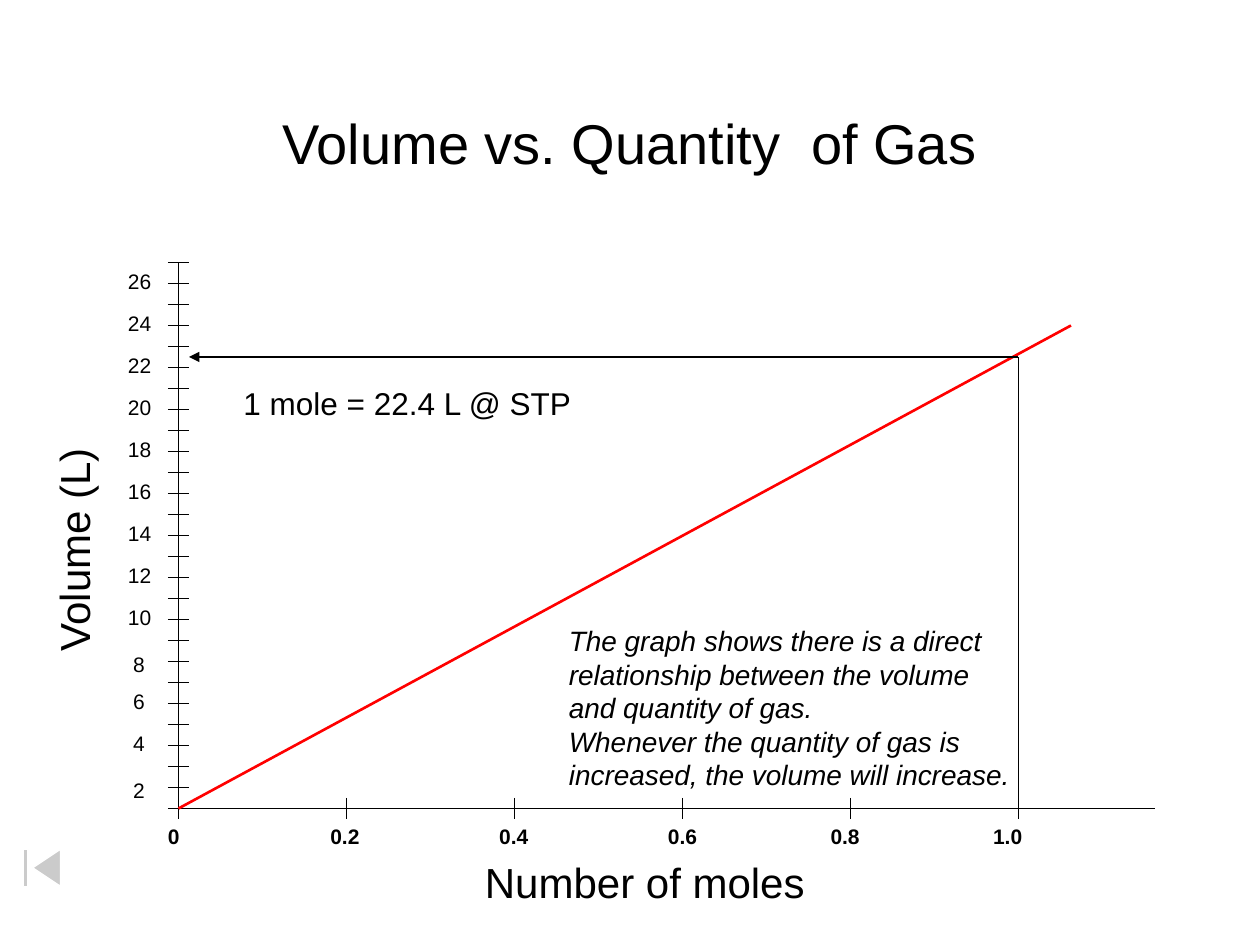
from lxml import etree
from pptx import Presentation
from pptx.dml.color import RGBColor
from pptx.enum.shapes import MSO_CONNECTOR, MSO_SHAPE
from pptx.enum.text import MSO_ANCHOR, MSO_AUTO_SIZE, PP_ALIGN
from pptx.oxml.ns import qn
from pptx.util import Inches, Pt

STRAIGHT = MSO_CONNECTOR.STRAIGHT
BUTTON = MSO_SHAPE.ACTION_BUTTON_BEGINNING
MIDDLE, TOP = MSO_ANCHOR.MIDDLE, MSO_ANCHOR.TOP
LEFT, CENTER = PP_ALIGN.LEFT, PP_ALIGN.CENTER
FIT = MSO_AUTO_SIZE.SHAPE_TO_FIT_TEXT

COLS, ROWS = 60, 45       # slide grid, six cells to the inch
AXIS_X, AXIS_Y = 8.5, 38.5  # origin of the graph
X_STEP = 8                # columns per 0.2 mole


def unit(n):
    return Inches(n / 6)


def color(value):
    return RGBColor.from_string(value)


def write(tf, text, size=12, bold=False, italic=False, align=LEFT,
          ink="000000", tabs=()):
    """Fill a text frame, one paragraph for each line of text."""
    for i, line in enumerate(text.split("\n")):
        p = tf.paragraphs[0] if i == 0 else tf.add_paragraph()
        p.alignment = align
        if tabs:
            stops = etree.SubElement(p._p.get_or_add_pPr(), qn("a:tabLst"))
            for pos in tabs:
                etree.SubElement(stops, qn("a:tab"), pos=str(Inches(pos)), algn="l")
        r = p.add_run()
        r.text = line
        r.font.name, r.font.size = "Arial", Pt(size)
        r.font.bold, r.font.italic = bold, italic
        r.font.color.rgb = color(ink)


class Graph:
    """Style and current slide; lengths are grid columns and rows."""

    def __init__(self, prs, ink="000000", weight=0.75):
        self.s = prs.slides.add_slide(prs.slide_layouts[6])
        self.ink, self.weight = ink, weight

    def text(self, x, y, w, h, text, wrap=False, anchor=TOP, rotation=0, **fmt):
        sp = self.s.shapes.add_textbox(unit(x), unit(y), unit(w), unit(h))
        sp.rotation = rotation
        tf = sp.text_frame
        tf.word_wrap, tf.vertical_anchor = wrap, anchor
        if anchor == TOP:
            tf.auto_size = FIT
        write(tf, text, **fmt)

    def line(self, x1, y1, x2, y2, ink=None, weight=None, arrow=False):
        c = self.s.shapes.add_connector(STRAIGHT, unit(x1), unit(y1),
                                        unit(x2), unit(y2))
        c.line.color.rgb = color(ink or self.ink)
        c.line.width = Pt(weight or self.weight)
        if arrow:
            etree.SubElement(c.line._get_or_add_ln(), qn("a:headEnd"),
                             type="triangle")
        etree.SubElement(c._element.spPr, qn("a:effectLst"))

    def button(self, x, y, w, h, fill="FFFFFF", opacity=50):
        sp = self.s.shapes.add_shape(BUTTON, unit(x), unit(y), unit(w), unit(h))
        sp.shadow.inherit = False
        sp.fill.solid()
        sp.fill.fore_color.rgb = color(fill)
        rgb = sp._element.spPr.find(qn("a:solidFill"))[0]
        etree.SubElement(rgb, qn("a:alpha"), val=str(opacity * 1000))
        sp.line.color.rgb = color(fill)
        sp.line.width = Pt(self.weight)


def main():
    prs = Presentation()
    prs.slide_width, prs.slide_height = unit(COLS), unit(ROWS)
    g = Graph(prs)

    # Title
    g.text(4.5, 3, 51, 7.5, "Volume vs. Quantity  of Gas", wrap=True,
           anchor=MIDDLE, size=32, align=CENTER)

    # Axes and tick marks
    g.line(AXIS_X, AXIS_Y, 55, AXIS_Y)
    g.line(AXIS_X, AXIS_Y, AXIS_X, AXIS_Y - 26)
    for i in range(27):
        g.line(AXIS_X - 0.5, AXIS_Y - i, AXIS_X + 0.5, AXIS_Y - i)
    for i in range(6):
        x = AXIS_X + i * X_STEP
        g.line(x, AXIS_Y - 0.5, x, AXIS_Y + 0.5)

    # Axis labels
    g.text(7.4, 38.9, 43.1, 1.8, "0\t0.2\t0.4\t0.6\t0.8\t1.0", wrap=True,
           bold=True, tabs=(1.29, 2.63, 3.97, 5.26, 6.55))
    nudge = {2: 0.25, 8: 0.25}
    for v in range(2, 27, 2):
        x, w = (5.75, 1.75) if v < 10 else (5.5, 2.35)
        g.text(x, AXIS_Y - v + nudge.get(v, 0), w, 1.8, str(v))
    g.text(-3.3, 23.3, 13.6, 3, "Volume (L)", wrap=True, rotation=270, size=24)
    g.text(22.5, 40.5, 16.45, 3, "Number of moles", size=24)

    # Reading at one mole and the volume line
    one_mole, volume = AXIS_X + 5 * X_STEP, 17
    g.line(one_mole, AXIS_Y - 0.5, one_mole, volume)
    g.line(AXIS_X, AXIS_Y, 51, 15.5, ink="FF0000", weight=1.5)
    g.line(AXIS_X + 0.5, volume, one_mole, volume, arrow=True)

    # Notes on the graph
    g.text(26.5, 29.4, 23, 8.65,
           "The graph shows there is a direct\n"
           "relationship between the volume\n"
           "and quantity of gas.\n"
           "Whenever the quantity of gas is\n"
           "increased, the volume will increase.",
           wrap=True, size=16, italic=True)
    g.text(11, 18, 16.85, 2.4, "1 mole = 22.4 L @ STP", size=18)

    # Navigation button
    g.button(0, 40.15, 4, 2.35)

    prs.save("out.pptx")


if __name__ == "__main__":
    main()
